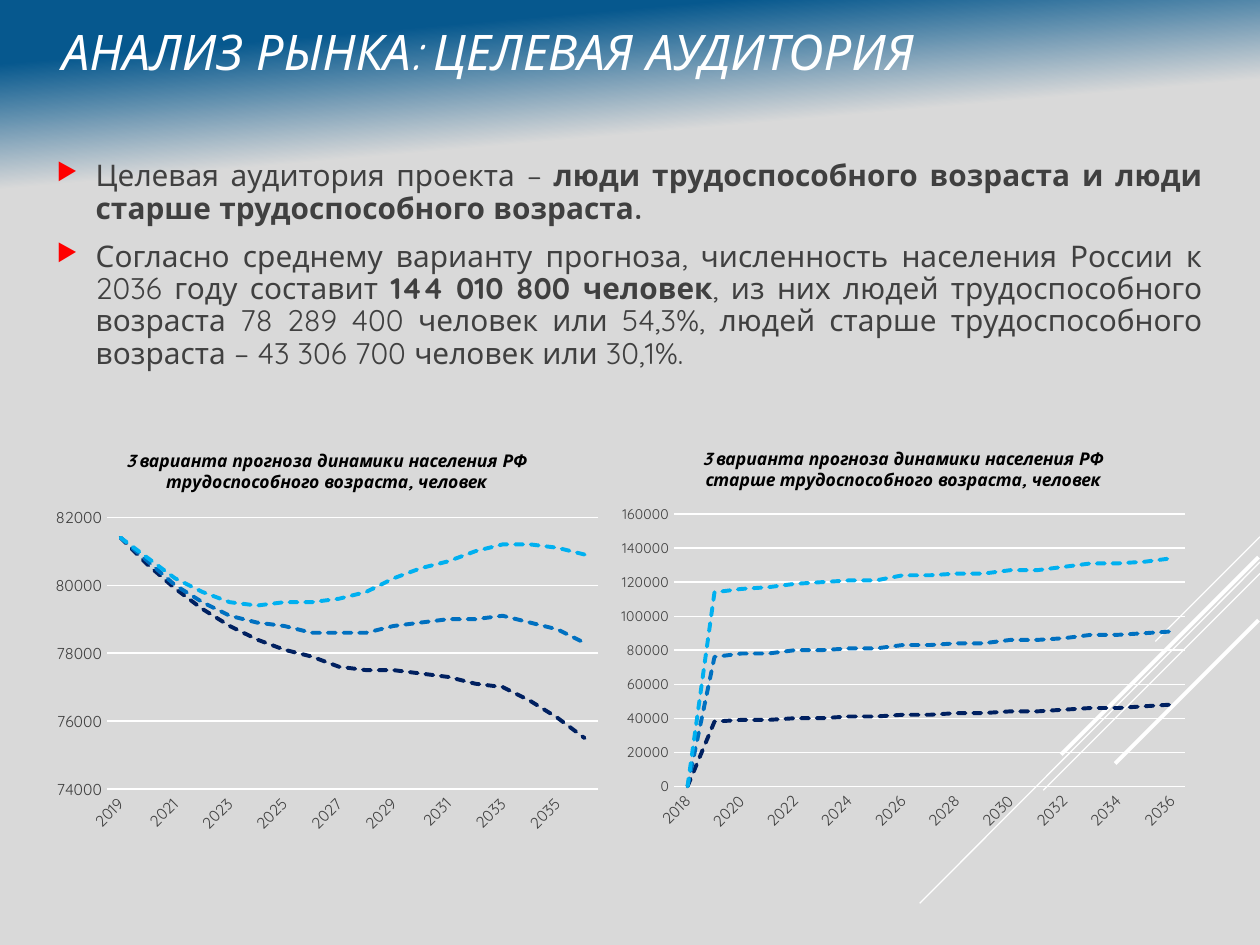
from dataclasses import dataclass

from lxml import etree
from pptx import Presentation
from pptx import util as u
from pptx.chart import data as chart_data
from pptx.dml import color
from pptx.enum import chart as charts, dml, shapes, text
from pptx.oxml import ns


@dataclass(frozen=True)
class Theme:
    """Colours, font and type sizes of the slide."""
    font: str = "Quicksand"
    blue: str = "06588E"
    grey: str = "D9D9D9"
    white: str = "FFFFFF"
    black: str = "000000"
    body: str = "404040"
    bullet: str = "FF0000"
    series: tuple = ("002060", "0070C0", "00B0F0")
    title_size: float = 28
    body_size: float = 17
    chart_title_size: float = 10
    axis_size: float = 9
    small_axis_size: float = 8


THEME = Theme()
RAYS = [
    (25.4, 10.82, 23.29, 12.93, 0.75),
    (25.4, 11.33, 18.54, 18.21, 0.75),
    (25.4, 11.56, 21.03, 15.93, 0.75),
    (25.37, 11.23, 21.39, 15.21, 2.25),
    (25.37, 12.5, 22.48, 15.39, 2.25),
]
BODY = [
    [("Целевая аудитория проекта – ", False),
     ("люди трудоспособного возраста и люди старше трудоспособного возраста.", True)],
    [("Согласно среднему варианту прогноза, численность населения России к 2036 году составит ", False),
     ("144 010 800 человек", True),
     (", из них людей трудоспособного возраста 78 289 400 человек или 54,3%, "
      "людей старше трудоспособного возраста – 43 306 700 человек или 30,1%.", False)],
]
WORKING_AGE_HUNDREDS = [
    [814, 806, 799, 793, 788, 784, 781, 779, 776, 775, 775, 774, 773, 771, 770, 766, 761, 755],
    [814, 807, 800, 795, 791, 789, 788, 786, 786, 786, 788, 789, 790, 790, 791, 789, 787, 783],
    [814, 808, 802, 798, 795, 794, 795, 795, 796, 798, 802, 805, 807, 810, 812, 812, 811, 809],
]
OLDER_THOUSANDS = [
    [None, 38, 39, 39, 40, 40, 41, 41, 42, 42, 43, 43, 44, 44, 45, 46, 46, 47, 48],
    [None, 38, 39, 39, 40, 40, 40, 40, 41, 41, 41, 41, 42, 42, 42, 43, 43, 43, 43],
    [None, 38, 38, 39, 39, 40, 40, 40, 41, 41, 41, 41, 41, 41, 42, 42, 42, 42, 43],
]


def rgb(value):
    """Return a colour object for a hex value."""
    return color.RGBColor.from_string(value)


def set_values(target, values):
    """Set each attribute of the target from a dict."""
    for name, value in values.items():
        setattr(target, name, value)


def set_font(font, size, colour, **values):
    """Give a font the theme typeface, a size, a colour and further values."""
    set_values(font, {"name": THEME.font, "size": u.Pt(size), **values})
    font.color.rgb = rgb(colour)


def set_line(line, colour, width, **values):
    """Give a line a colour, a width and further values."""
    line.color.rgb = rgb(colour)
    set_values(line, {"width": u.Pt(width), **values})


def paint_background(slide):
    """Fill the background with a gradient from blue to grey."""
    fill = slide.background.fill
    fill.gradient()
    fill.gradient_angle = 275
    stops = ((0.06, THEME.blue), (0.18, THEME.grey))
    for stop, (position, colour) in zip(fill.gradient_stops, stops):
        stop.position = position
        stop.color.rgb = rgb(colour)


def add_ray(slide, left, top, right, bottom, width):
    """Draw one white diagonal line."""
    ray = slide.shapes.add_connector(
        shapes.MSO_CONNECTOR.STRAIGHT, *map(u.Cm, (left, top, right, bottom)))
    set_line(ray.line, THEME.white, width)
    etree.SubElement(ray.element.spPr, ns.qn("a:effectLst"))


def add_text_frame(slide, *box):
    """Add a wrapped, vertically centred text box and return its frame."""
    frame = slide.shapes.add_textbox(*map(u.Cm, box)).text_frame
    set_values(frame, {"word_wrap": True, "vertical_anchor": text.MSO_ANCHOR.MIDDLE})
    return frame


def add_run(paragraph, words, size, colour, **values):
    """Append a formatted run to a paragraph."""
    run = paragraph.add_run()
    run.text = words
    set_font(run.font, size, colour, **values)


def add_bullet(paragraph):
    """Give a paragraph a hanging red triangle."""
    properties = paragraph._p.get_or_add_pPr()
    set_values_in_xml = {"marL": u.Cm(0.79), "indent": -u.Cm(0.79)}
    for name, value in set_values_in_xml.items():
        properties.set(name, str(int(value)))
    bullet_colour = etree.SubElement(properties, ns.qn("a:buClr"))
    etree.SubElement(bullet_colour, ns.qn("a:srgbClr"), val=THEME.bullet)
    etree.SubElement(properties, ns.qn("a:buSzPct"), val="80000")
    etree.SubElement(properties, ns.qn("a:buChar"), char="▶")


def add_title(slide):
    """Add the slide heading."""
    paragraph = add_text_frame(slide, 0, -0.08, 25.4, 2.21).paragraphs[0]
    paragraph._p.get_or_add_pPr().set("marL", str(int(u.Cm(1))))
    add_run(paragraph, "АНАЛИЗ РЫНКА: ЦЕЛЕВАЯ АУДИТОРИЯ",
            THEME.title_size, THEME.white, italic=True)


def add_body(slide):
    """Add the bulleted paragraphs."""
    frame = add_text_frame(slide, 0.89, 2.72, 23.6, 5.28)
    for index, runs in enumerate(BODY):
        paragraph = frame.add_paragraph() if index else frame.paragraphs[0]
        set_values(paragraph, {"alignment": text.PP_ALIGN.JUSTIFY, "line_spacing": 0.9,
                               "space_before": u.Pt(3.4), "space_after": u.Pt(6)})
        add_bullet(paragraph)
        for words, bold in runs:
            add_run(paragraph, words, THEME.body_size, THEME.body, bold=bold)


def format_axes(chart, value_size, scale):
    """Style both axes and apply the scale of the value axis."""
    for axis, size in ((chart.category_axis, THEME.axis_size), (chart.value_axis, value_size)):
        set_values(axis, {"major_tick_mark": charts.XL_TICK_MARK.NONE,
                          "minor_tick_mark": charts.XL_TICK_MARK.NONE})
        set_font(axis.tick_labels.font, size, THEME.body)
    set_line(chart.category_axis.format.line, THEME.white, 0.75)
    chart.value_axis.format.line.fill.background()
    set_line(chart.value_axis.major_gridlines.format.line, THEME.white, 0.75)
    set_values(chart.value_axis, scale)


def add_forecast(slide, kind, box, title, first_year, rows, unit, value_size, **scale):
    """Add a dashed line chart with three forecast variants."""
    content = chart_data.CategoryChartData()
    content.categories = [str(first_year + offset) for offset in range(len(rows[0]))]
    for number, row in enumerate(rows, 1):
        content.add_series(f"Series {number}", [value and value * unit for value in row])
    chart = slide.shapes.add_chart(kind, *map(u.Cm, box), content).chart
    set_values(chart, {"has_legend": False, "has_title": True})
    set_font(chart.font, THEME.chart_title_size, THEME.white)
    chart.chart_title.text_frame.text = title
    for paragraph in chart.chart_title.text_frame.paragraphs:
        for run in paragraph.runs:
            set_font(run.font, THEME.chart_title_size, THEME.black, bold=True, italic=True)
    format_axes(chart, value_size, scale)
    chart.plots[0].vary_by_categories = False
    for series, colour in zip(chart.plots[0].series, THEME.series):
        series.smooth = False
        set_line(series.format.line, colour, 2.25, dash_style=dml.MSO_LINE.SQUARE_DOT)
    changes = (("//c:ser/c:spPr/a:ln", "cap", "rnd"),
               ("//c:catAx/c:txPr/a:bodyPr", "rot", "-2700000"),
               ("//c:dispBlanksAs", "val", "zero"))
    for query, name, value in changes:
        for element in chart.element.xpath(query):
            element.set(name, value)


def main():
    """Build and save the slide."""
    presentation = Presentation()
    set_values(presentation, {"slide_width": u.Cm(25.4), "slide_height": u.Cm(19.05)})
    slide = presentation.slides.add_slide(presentation.slide_layouts[6])
    paint_background(slide)
    for ray in RAYS:
        add_ray(slide, *ray)
    add_body(slide)
    heading = "3 варианта прогноза динамики населения РФ\n"
    add_forecast(slide, charts.XL_CHART_TYPE.LINE, (0.89, 8.66, 11.4, 8.31),
                 heading + "трудоспособного возраста, человек", 2019,
                 WORKING_AGE_HUNDREDS, 100, THEME.axis_size,
                 minimum_scale=74000, major_unit=2000)
    add_forecast(slide, charts.XL_CHART_TYPE.LINE_STACKED, (12.29, 8.61, 11.84, 8.31),
                 heading + "старше трудоспособного возраста, человек", 2018,
                 OLDER_THOUSANDS, 1000, THEME.small_axis_size)
    add_title(slide)
    presentation.save("out.pptx")


if __name__ == "__main__":
    main()
